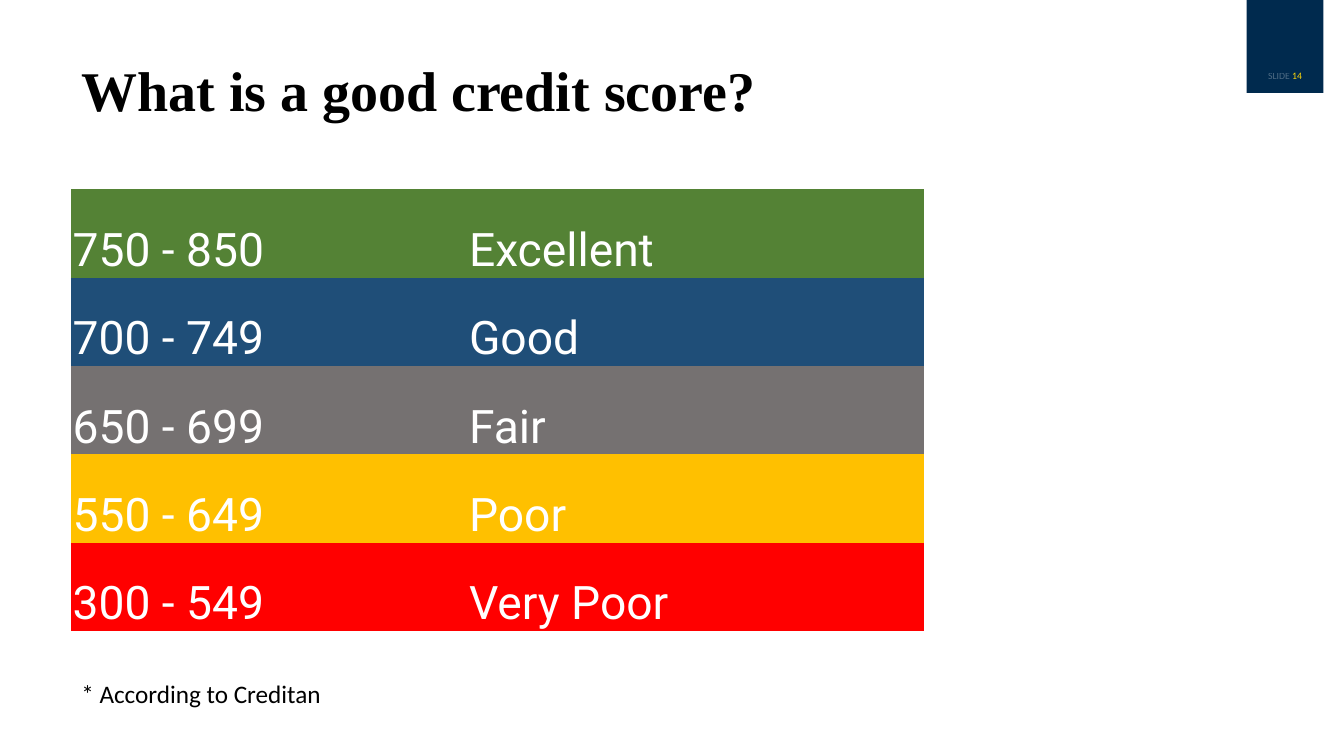
from lxml.etree import SubElement
from pptx import Presentation
from pptx.dml.color import RGBColor
from pptx.enum.shapes import MSO_SHAPE
from pptx.enum.text import MSO_ANCHOR as Anchor, PP_ALIGN as Align
from pptx.oxml.ns import qn
from pptx.util import Cm, Pt

NO_GRID_STYLE = "{2D5ABB26-0587-4C30-8999-92F81FD0307C}"
RATINGS = [
    ("750 - 850", "Excellent", "548235"),
    ("700 - 749", "Good", "1F4E78"),
    ("650 - 699", "Fair", "757171"),
    ("550 - 649", "Poor", "FFC000"),
    ("300 - 549", "Very Poor", "FF0000"),
]


def paint(color_format, hex_color):
    color_format.rgb = RGBColor.from_string(hex_color)


def style(run, font, size, color, bold=False):
    run.font.name, run.font.size, run.font.bold = font, Pt(size), bold
    paint(run.font.color, color)


def add_title(slide, left, top, width, height):
    title = slide.shapes.title
    title.left, title.top = Cm(left), Cm(top)
    title.width, title.height = Cm(width), Cm(height)
    frame = title.text_frame
    frame.text = "What is a good credit score?"
    frame.vertical_anchor = Anchor.TOP
    frame.paragraphs[0].alignment = Align.LEFT
    style(frame.paragraphs[0].runs[0], "Times New Roman", 40, "000000", bold=True)


def add_slide_badge(slide, left, top, width, height):
    badge = slide.shapes.add_shape(
        MSO_SHAPE.RECTANGLE, Cm(left), Cm(top), Cm(width), Cm(height))
    badge.shadow.inherit = False
    badge.fill.solid()
    paint(badge.fill.fore_color, "002A4E")
    badge.line.fill.background()

    # Slide number in the lower part of the badge
    number = slide.shapes.add_textbox(
        Cm(left), Cm(top + 0.7 * height), Cm(width), Cm(0.24 * height))
    number.text_frame.word_wrap = True
    line = number.text_frame.paragraphs[0]
    line.alignment = Align.CENTER
    for text, color in (("SLIDE ", "FFFFFF"), ("14", "FCD60B")):
        run = line.add_run()
        run.text = text
        style(run, "Calibri", 7, color)
    # The word is a faded white
    white = line.runs[0].font.fill._xPr.find(qn("a:solidFill"))[0]
    SubElement(white, qn("a:alpha")).set("val", "31000")


def add_ratings(slide, left, top, width, height):
    table = slide.shapes.add_table(
        len(RATINGS), 2, Cm(left), Cm(top), Cm(width), Cm(height)).table
    table.first_row = table.horz_banding = False
    table._tbl.tblPr.find(qn("a:tableStyleId")).text = NO_GRID_STYLE
    range_width = 9.99
    table.columns[0].width = Cm(range_width)
    table.columns[1].width = Cm(width - range_width)

    for row, (score_range, rating, color) in enumerate(RATINGS):
        table.rows[row].height = Cm(height / len(RATINGS))
        for column, text in enumerate((score_range, rating)):
            cell = table.cell(row, column)
            cell.fill.solid()
            paint(cell.fill.fore_color, color)
            cell.vertical_anchor = Anchor.BOTTOM
            cell.margin_left = cell.margin_right = cell.margin_top = Cm(0.03)
            cell.margin_bottom = 0
            cell.text_frame.text = text
            style(cell.text_frame.paragraphs[0].runs[0], "Roboto", 33, "FFFFFF")


def add_source_note(slide, left, top, width, height):
    note = slide.shapes.add_textbox(Cm(left), Cm(top), Cm(width), Cm(height))
    note.text_frame.word_wrap = True
    note.text_frame.text = "* According to Creditan"
    style(note.text_frame.paragraphs[0].runs[0], "Calibri", 18, "000000")


def main():
    deck = Presentation()
    deck.slide_width, deck.slide_height = Cm(33.87), Cm(19.05)
    slide = deck.slides.add_slide(deck.slide_layouts[5])
    margin = 1.8
    add_slide_badge(slide, 31.42, 0, 1.93, 2.34)
    add_title(slide, margin, 1.27, 18.42, 1.96)
    add_ratings(slide, margin, 4.77, 21.48, 11.13)
    add_source_note(slide, margin, 16.97, 16.94, 1.02)
    deck.save("out.pptx")


if __name__ == "__main__":
    main()
